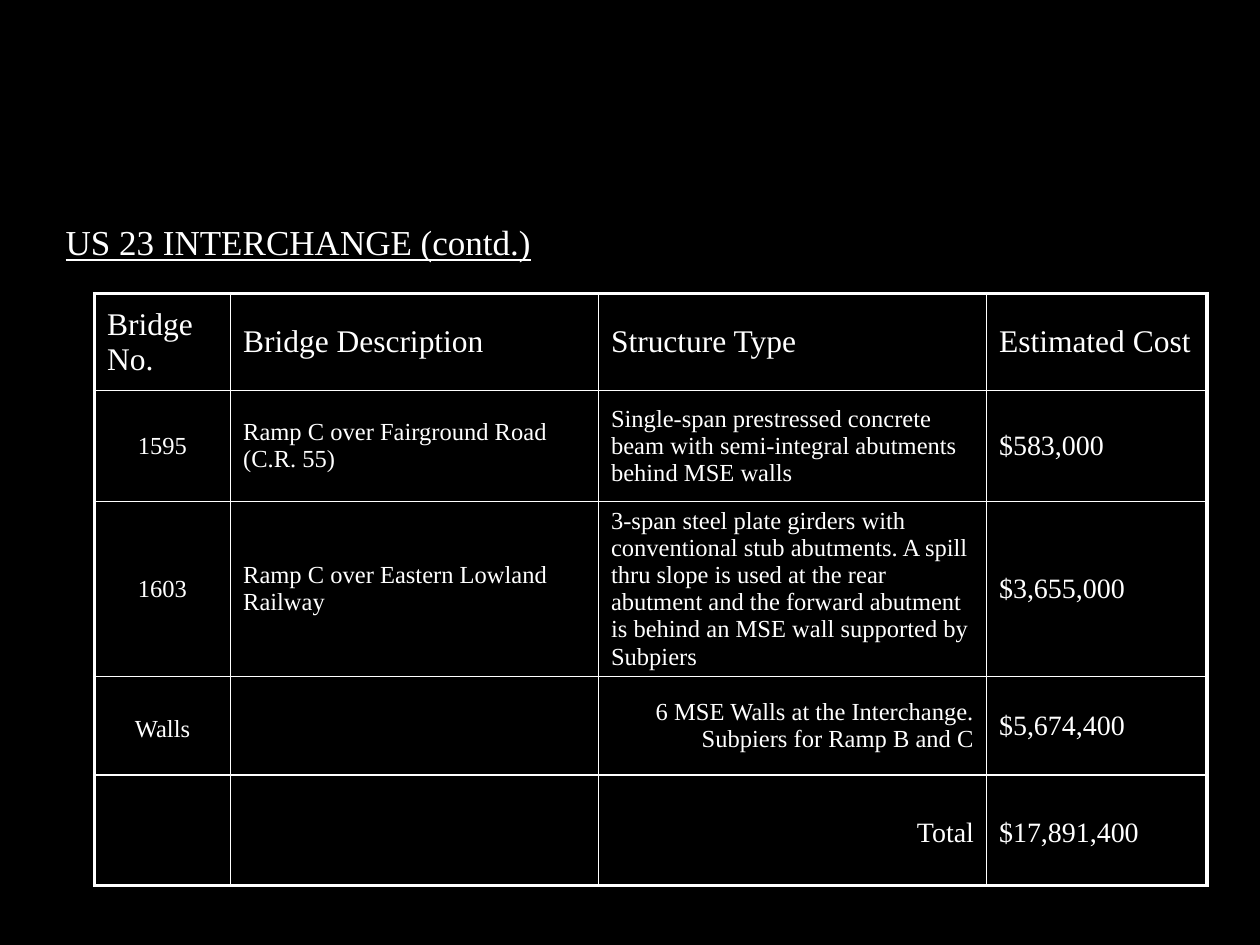
from lxml import etree
from pptx import Presentation
from pptx.dml.color import RGBColor
from pptx.enum.text import MSO_ANCHOR, PP_ALIGN
from pptx.oxml.ns import qn
from pptx.util import Inches, Pt

LEFT, CENTER, RIGHT = PP_ALIGN.LEFT, PP_ALIGN.CENTER, PP_ALIGN.RIGHT
MIDDLE = MSO_ANCHOR.MIDDLE

# Content
HEADING = "US 23 INTERCHANGE (contd.)"
HEADERS = ("Bridge No.", "Bridge Description", "Structure Type", "Estimated Cost")
BRIDGES = [
    ("1595", "Ramp C over Fairground Road (C.R. 55)",
     "Single-span prestressed concrete beam with semi-integral abutments "
     "behind MSE walls", "$583,000"),
    ("1603", "Ramp C over Eastern Lowland Railway",
     "3-span steel plate girders with conventional stub abutments. A spill "
     "thru slope is used at the rear abutment and the forward abutment is "
     "behind an MSE wall supported by Subpiers", "$3,655,000"),
]
WALLS = ("Walls", "",
         "6 MSE Walls at the Interchange. Subpiers for Ramp B and C", "$5,674,400")
TOTAL = ("", "", "Total", "$17,891,400")
ROWS = [HEADERS, *BRIDGES, WALLS, TOTAL]

COLUMN_WIDTHS = (1.08, 2.92, 3.08, 1.75)
ROW_HEIGHTS = (0.77, 0.88, 1.39, 0.78, 0.88)
TABLE_LEFT, TABLE_TOP = 0.75, 2.33

THEME = {
    "font": "Times New Roman", "background": "000000", "ink": "FFFFFF",
    "heading": 20, "header": 18, "detail": 14, "cost": 16,
    "outer_line": 2.25, "inner_line": 1,
}


def write(frame, text, size, align=LEFT, underline=False):
    """Put formatted text into the frame's first paragraph."""
    frame.word_wrap = True
    paragraph = frame.paragraphs[0]
    paragraph.text = text
    paragraph.alignment = align
    paragraph.space_before = Pt(0)
    font = paragraph.font
    font.name, font.size = THEME["font"], Pt(size)
    font.bold, font.underline = False, underline
    font.color.rgb = RGBColor.from_string(THEME["ink"])


def draw_borders(cell, outer_sides):
    """Rule all four sides, heavier on the table's outside edges."""
    properties = cell._tc.get_or_add_tcPr()
    for position, side in enumerate("LRTB"):
        weight = THEME["outer_line" if side in outer_sides else "inner_line"]
        line = etree.Element(qn(f"a:ln{side}"), w=str(int(Pt(weight))))
        fill = etree.SubElement(line, qn("a:solidFill"))
        etree.SubElement(fill, qn("a:srgbClr"), val=THEME["ink"])
        properties.insert(position, line)


def cell_format(row, column):
    """Return the type size and alignment for a table cell."""
    if row == 0:
        return THEME["header"], LEFT
    if column == 3:
        return THEME["cost"], LEFT
    if column == 0:
        return THEME["detail"], CENTER
    if column == 2 and ROWS[row] is TOTAL:
        return THEME["cost"], RIGHT
    return THEME["detail"], RIGHT if column == 2 and ROWS[row] is WALLS else LEFT


def main():
    deck = Presentation()
    deck.slide_width, deck.slide_height = Inches(10), Inches(7.5)
    slide = deck.slides.add_slide(deck.slide_layouts[5])
    slide.background.fill.solid()
    slide.background.fill.fore_color.rgb = RGBColor.from_string(THEME["background"])

    # Heading
    heading = slide.shapes.title
    heading.left, heading.top = Inches(0.42), Inches(1.67)
    heading.width, heading.height = Inches(9.08), Inches(0.5)
    heading.text_frame.vertical_anchor = MIDDLE
    write(heading.text_frame, HEADING, THEME["heading"], underline=True)

    # Cost table
    costs = slide.shapes.add_table(
        len(ROWS), len(HEADERS), Inches(TABLE_LEFT), Inches(TABLE_TOP),
        Inches(sum(COLUMN_WIDTHS)), Inches(sum(ROW_HEIGHTS))).table
    costs.first_row = costs.horz_banding = False
    for column, width in zip(costs.columns, COLUMN_WIDTHS):
        column.width = Inches(width)
    for row, height in zip(costs.rows, ROW_HEIGHTS):
        row.height = Inches(height)

    last_row, last_column = len(ROWS) - 1, len(HEADERS) - 1
    for r, entries in enumerate(ROWS):
        for c, entry in enumerate(entries):
            cell = costs.cell(r, c)
            cell.fill.background()
            cell.vertical_anchor = MIDDLE
            size, align = cell_format(r, c)
            write(cell.text_frame, entry, size, align=align)
            # The total and the walls label sit slightly below the middle
            if entries is TOTAL or entry == "Walls":
                cell.margin_top = Inches(0.1)
            edges = {"L": c == 0, "R": c == last_column,
                     "T": r == 0, "B": r == last_row}
            draw_borders(cell, [side for side, outer in edges.items() if outer])

    deck.save("out.pptx")


if __name__ == "__main__":
    main()
